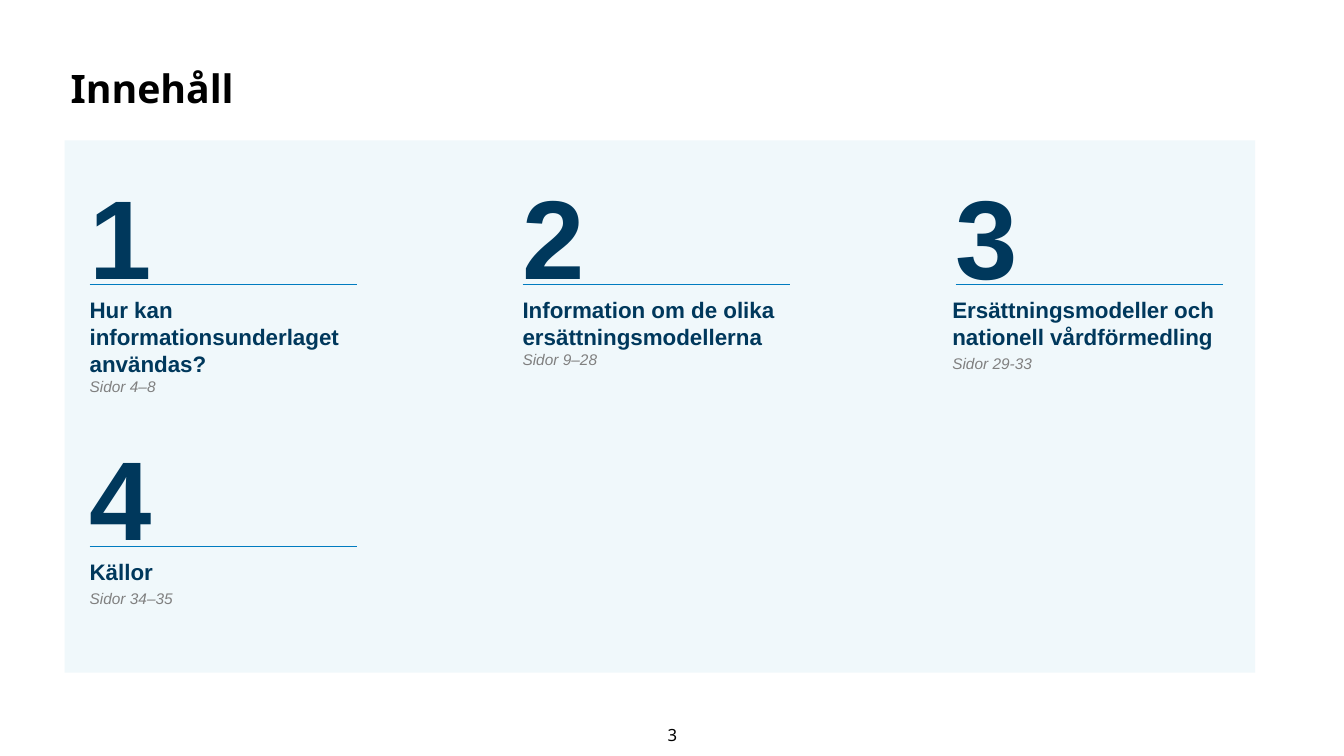
from dataclasses import dataclass

from lxml import etree
from pptx import Presentation
from pptx.dml.color import RGBColor
from pptx.enum.shapes import MSO_CONNECTOR, MSO_SHAPE
from pptx.enum.text import MSO_ANCHOR, MSO_AUTO_SIZE, PP_ALIGN
from pptx.oxml.ns import qn
from pptx.util import Cm, Pt

STRAIGHT = MSO_CONNECTOR.STRAIGHT
RECTANGLE = MSO_SHAPE.RECTANGLE
TOP, MIDDLE = MSO_ANCHOR.TOP, MSO_ANCHOR.MIDDLE
LEFT, CENTER, JUSTIFY = PP_ALIGN.LEFT, PP_ALIGN.CENTER, PP_ALIGN.JUSTIFY
NO_AUTOFIT = MSO_AUTO_SIZE.NONE
TITLE_ONLY = 5

# Grid of sections, in centimetres
GRID_LEFT, GRID_TOP = 2.26, 4.22
COLUMN_STEP, ROW_STEP, COLUMNS = 10.91, 6.59, 3
SECTION_WIDTH = 6.74
RULE_OFFSET, CAPTION_OFFSET = 2.95, 3.25

# Heading, pages, whether the pages form their own paragraph, caption shift
SECTIONS = [
    ("Hur kan informationsunderlaget användas? ", "Sidor 4–8", False, 0),
    ("Information om de olika ersättningsmodellerna", "Sidor 9–28", False, 0),
    ("Ersättningsmodeller och nationell vårdförmedling", "Sidor 29-33", True, -0.08),
    ("Källor", "Sidor 34–35", True, 0),
]


@dataclass(frozen=True)
class Theme:
    title_font: str = "Noto Sans"
    body_font: str = "Arial"
    black: RGBColor = RGBColor(0x00, 0x00, 0x00)
    navy: RGBColor = RGBColor(0x00, 0x38, 0x5C)
    blue: RGBColor = RGBColor(0x01, 0x7C, 0xC0)
    gray: RGBColor = RGBColor(0x80, 0x80, 0x80)
    pale_blue: RGBColor = RGBColor(0xDB, 0xEE, 0xF5)
    panel_opacity: int = 40
    title_size: int = 28
    number_size: int = 80
    heading_size: int = 16
    pages_size: int = 11
    footer_size: int = 12
    rule_width: float = 0.5
    space_after: int = 3


class ContentsSlide:
    def __init__(self, slide, theme):
        self.slide = slide
        self.theme = theme

    def format_run(self, run, font, size, color, bold=False, italic=False):
        run.font.name = font
        run.font.size = Pt(size)
        run.font.color.rgb = color
        run.font.bold = bold
        run.font.italic = italic

    def title(self, text):
        theme = self.theme
        shape = self.slide.shapes.title
        shape.left, shape.top = Cm(1.78), Cm(1.5)
        shape.width, shape.height = Cm(27), Cm(3)
        frame = shape.text_frame
        frame.text = text
        frame.auto_size = NO_AUTOFIT
        frame.vertical_anchor = TOP
        frame.margin_left = frame.margin_top = 0
        paragraph = frame.paragraphs[0]
        paragraph.alignment = LEFT
        paragraph.line_spacing = 1.1
        self.format_run(paragraph.runs[0], theme.title_font, theme.title_size,
                        theme.black, bold=True)

    def text_box(self, left, top, width, height, text):
        """Add a wrapping box without margins and return its text frame."""
        shape = self.slide.shapes.add_textbox(Cm(left), Cm(top), Cm(width), Cm(height))
        frame = shape.text_frame
        frame.word_wrap = True
        frame.margin_left = frame.margin_right = 0
        frame.margin_top = frame.margin_bottom = 0
        frame.text = text
        return frame

    def page_number(self, text):
        theme = self.theme
        frame = self.text_box(15.65, 18.01, 2.59, 1.02, text)
        frame.vertical_anchor = MIDDLE
        paragraph = frame.paragraphs[0]
        paragraph.alignment = CENTER
        self.format_run(paragraph.runs[0], theme.title_font, theme.footer_size, theme.black)

    def panel(self):
        shape = self.slide.shapes.add_shape(RECTANGLE, Cm(1.63), Cm(3.54), Cm(30), Cm(13.41))
        shape.shadow.inherit = False
        shape.line.fill.background()
        shape.fill.solid()
        shape.fill.fore_color.rgb = self.theme.pale_blue
        color = shape.fill._xPr.find(".//" + qn("a:srgbClr"))
        etree.SubElement(color, qn("a:alpha"), val=str(self.theme.panel_opacity * 1000))

    def number(self, left, top, text):
        theme = self.theme
        paragraph = self.text_box(left, top, 3.48, 3.53, text).paragraphs[0]
        paragraph.alignment = JUSTIFY
        paragraph.space_after = Pt(theme.space_after)
        self.format_run(paragraph.runs[0], theme.body_font, theme.number_size,
                        theme.navy, bold=True)

    def rule(self, left, top):
        line = self.slide.shapes.add_connector(
            STRAIGHT, Cm(left), Cm(top), Cm(left + SECTION_WIDTH), Cm(top))
        line.line.color.rgb = self.theme.blue
        line.line.width = Pt(self.theme.rule_width)
        etree.SubElement(line._element.spPr, qn("a:effectLst"))

    def caption(self, left, top, heading, pages, separate):
        theme = self.theme
        separator = "\n" if separate else "\v"
        frame = self.text_box(left, top, SECTION_WIDTH, 2.26, heading + separator + pages)
        for paragraph in frame.paragraphs:
            paragraph.alignment = LEFT
            paragraph.space_after = Pt(theme.space_after)
            for line_break in paragraph._p.findall(qn("a:br")):
                etree.SubElement(line_break, qn("a:rPr"), sz=str(theme.heading_size * 100))
        heading_run, pages_run = [run for paragraph in frame.paragraphs for run in paragraph.runs]
        self.format_run(heading_run, theme.body_font, theme.heading_size, theme.navy, bold=True)
        self.format_run(pages_run, theme.body_font, theme.pages_size, theme.gray, italic=True)

    def section(self, index, heading, pages, separate, shift):
        row, column = divmod(index, COLUMNS)
        left = GRID_LEFT + column * COLUMN_STEP
        top = GRID_TOP + row * ROW_STEP
        self.number(left, top, str(index + 1))
        self.rule(left, top + RULE_OFFSET)
        self.caption(left + shift, top + CAPTION_OFFSET, heading, pages, separate)


def main():
    presentation = Presentation()
    presentation.slide_width, presentation.slide_height = Cm(33.87), Cm(19.05)
    slide = presentation.slides.add_slide(presentation.slide_layouts[TITLE_ONLY])
    contents = ContentsSlide(slide, Theme())
    contents.title("Innehåll")
    contents.page_number("3")
    contents.panel()
    for index, section in enumerate(SECTIONS):
        contents.section(index, *section)
    presentation.save("out.pptx")


if __name__ == "__main__":
    main()
